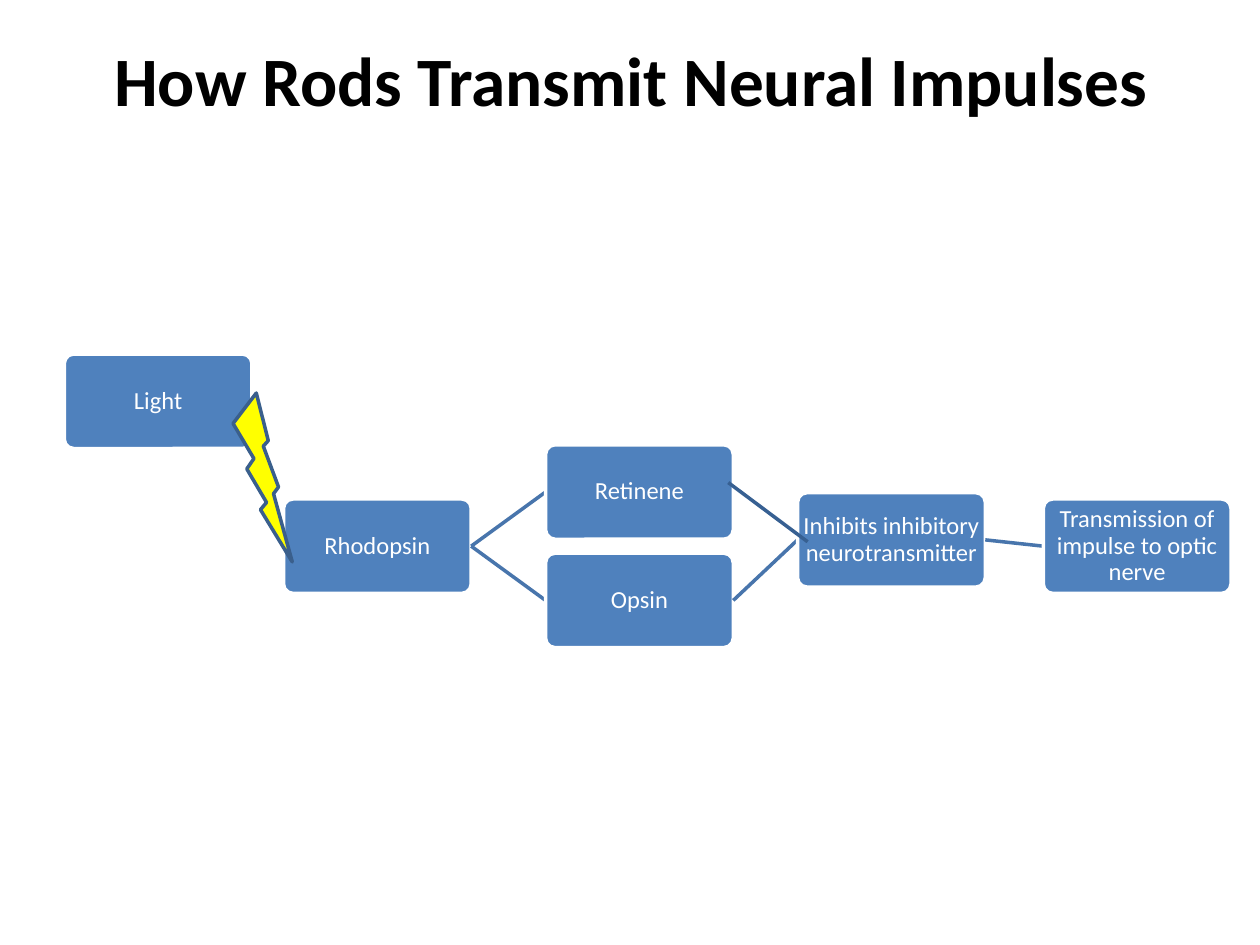
import pptx
import pptx.util
import pptx.dml.color
import pptx.enum.shapes
import pptx.enum.text
import pptx.oxml.ns
import lxml.etree

COLS, ROWS = 100, 75
BOX = (14.9, 7.5)
HUES = {
    "ink": "000000", "paper": "FFFFFF", "box": "4F81BD", "link": "4875AC",
    "beam": "3F6797", "cross": "376092", "bolt": "FFFF00", "edge": "3A5F8C",
}
# name: (column, row, label, source box, link colour)
STEPS = {
    "light": (5.1, 28.1, "Light", None, None),
    "rhodopsin": (22.5, 39.6, "Rhodopsin", "light", "beam"),
    "retinene": (43.3, 35.3, "Retinene", "rhodopsin", "link"),
    "opsin": (43.3, 43.9, "Opsin", "rhodopsin", "link"),
    "inhibit": (63.3, 39.1, "Inhibits inhibitory neurotransmitter",
                "opsin", "link"),
    "nerve": (82.8, 39.6, "Transmission of impulse to optic nerve",
              "inhibit", "link"),
}
RIGHT, LEFT = 3, 1
KINDS = pptx.enum.shapes.MSO_SHAPE
CENTER = pptx.enum.text.PP_ALIGN.CENTER
MIDDLE = pptx.enum.text.MSO_ANCHOR.MIDDLE


def tint(name):
    return pptx.dml.color.RGBColor.from_string(HUES[name])


def adorn(item, form):
    """Set each format value in form on the item."""
    for key, value in form.items():
        setattr(item, key, value)


class Board:
    """Holds the deck's style and the current slide, on a grid of cells."""

    def __init__(self):
        self.deck = pptx.Presentation()
        self.deck.slide_width = pptx.util.Inches(10)
        self.deck.slide_height = pptx.util.Inches(7.5)
        self.slide = self.deck.slides.add_slide(self.deck.slide_layouts[5])

    def grid(self, *cells):
        """Turn alternating columns and rows into slide lengths."""
        units = (self.deck.slide_width / COLS, self.deck.slide_height / ROWS)
        return [round(cell * units[i % 2]) for i, cell in enumerate(cells)]

    def label(self, shape, text, size, hue, bold=False, inset=0.1, gap=1.0):
        pad = pptx.util.Inches(inset)
        frame = shape.text_frame
        frame.text = text
        adorn(frame, {"word_wrap": True, "vertical_anchor": MIDDLE,
                      "margin_left": pad, "margin_right": pad,
                      "margin_top": pad, "margin_bottom": pad})
        line = frame.paragraphs[0]
        adorn(line, {"alignment": CENTER, "line_spacing": gap})
        adorn(line.runs[0].font, {"name": "Calibri", "bold": bold,
                                  "size": pptx.util.Pt(size)})
        line.runs[0].font.color.rgb = tint(hue)

    def title(self, text, *cells):
        head = self.slide.shapes.title
        adorn(head, dict(zip(("left", "top", "width", "height"),
                             self.grid(*cells))))
        self.label(head, text, 39.6, "ink", bold=True)

    def stroke(self, shape, hue):
        shape.line.color.rgb = tint(hue)
        shape.line.width = pptx.util.Pt(2)

    def shape(self, kind, cells, fill, edge):
        item = self.slide.shapes.add_shape(kind, *self.grid(*cells))
        item.shadow.inherit = False
        item.fill.solid()
        item.fill.fore_color.rgb = tint(fill)
        self.stroke(item, edge)
        return item

    def box(self, col, row, text):
        item = self.shape(KINDS.ROUNDED_RECTANGLE, (col, row, *BOX),
                          "box", "paper")
        item.adjustments[0] = 0.1
        self.label(item, text, 14, "paper", inset=0.01, gap=0.9)
        return item

    def line(self, cells, hue):
        item = self.slide.shapes.add_connector(
            pptx.enum.shapes.MSO_CONNECTOR.STRAIGHT, *self.grid(*cells))
        self.stroke(item, hue)
        lxml.etree.SubElement(item._element.spPr,
                              pptx.oxml.ns.qn("a:effectLst"))
        return item

    def flow(self, steps):
        """Draw each box above the link that leads into it."""
        boxes = {}
        for name, (col, row, text, source, hue) in steps.items():
            link = self.line((col, row, col, row), hue) if source else None
            boxes[name] = self.box(col, row, text)
            if link:
                link.begin_connect(boxes[source], RIGHT)
                link.end_connect(boxes[name], LEFT)


def main():
    board = Board()
    board.title("How Rods Transmit Neural Impulses", 5.1, 0, 90, 12.5)
    board.flow(STEPS)
    board.line((57.8, 38.3, 64.1, 43), "cross")
    board.shape(KINDS.LIGHTNING_BOLT, (18.5, 31.2, 4.7, 13.4), "bolt", "edge")
    board.deck.save("out.pptx")


if __name__ == "__main__":
    main()
